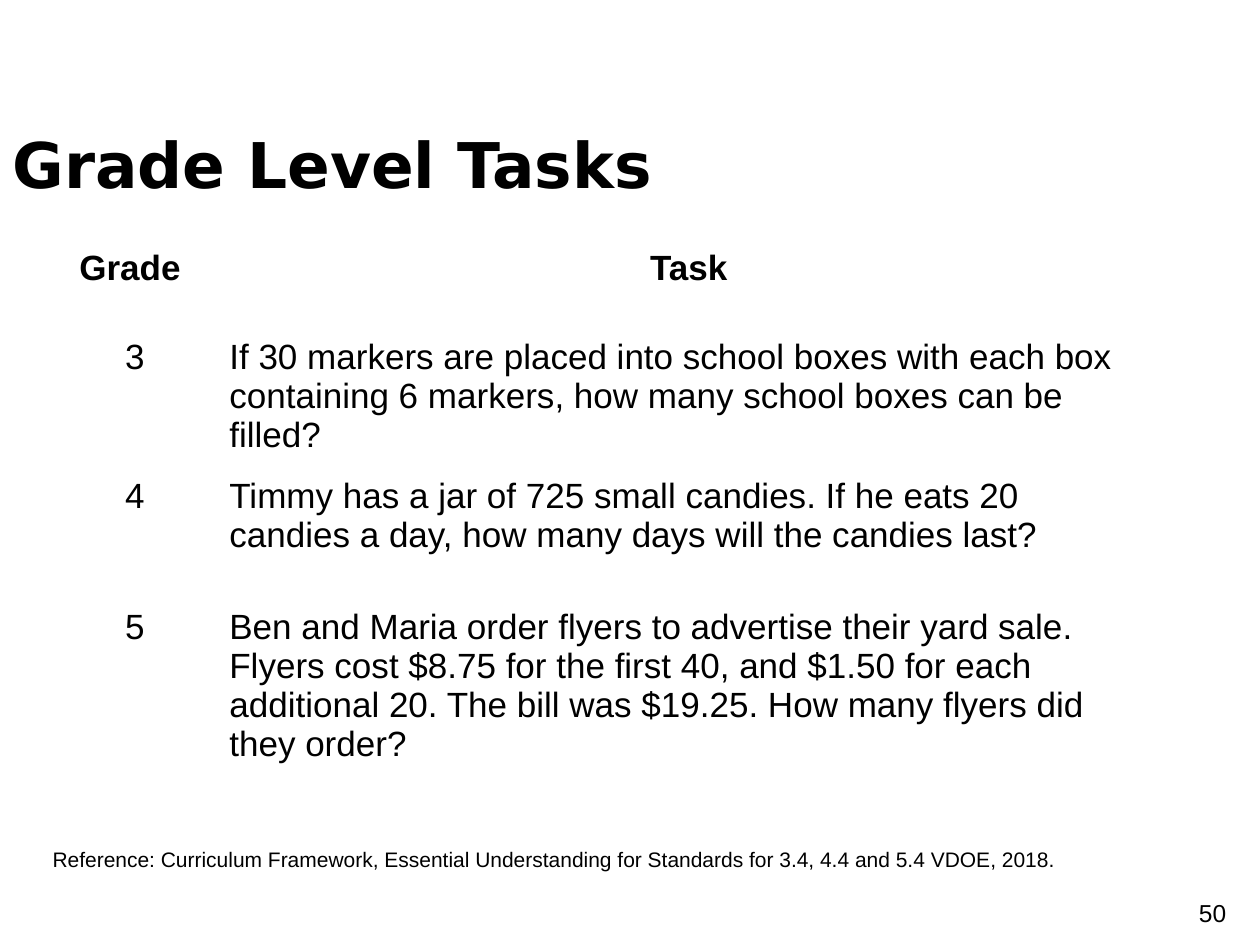
from pptx import Presentation
from pptx.dml.color import RGBColor
from pptx.enum.text import MSO_ANCHOR, PP_ALIGN
from pptx.util import Cm, Pt

COLORS = {"text": "000000", "background": "FFFFFF"}
BODY_FONT = "Arial"
TITLE_FONT = "DejaVu Sans"

COLUMN_WIDTHS = (3.3, 19.03)
ROW_HEIGHTS = (1.8, 2.59, 2.64, 1.8)
ROWS = [
    ("Grade ", "Task"),
    ("3", "If 30 markers are placed into school boxes with each box "
          "containing 6 markers, how many school boxes can be filled?"),
    ("4", "Timmy has a jar of 725 small candies. If he eats 20 candies a day, "
          "how many days will the candies last?"),
    ("5", "Ben and Maria order flyers to advertise their yard sale. "
          "Flyers cost $8.75 for the first 40, and $1.50 for each additional 20. "
          "The bill was $19.25. How many flyers did they order?"),
]


def write_text(text_frame, text, size, font=BODY_FONT, bold=False, align=PP_ALIGN.LEFT):
    paragraph = text_frame.paragraphs[0]
    paragraph.alignment = align
    run = paragraph.add_run()
    run.text = text
    run.font.name = font
    run.font.size = Pt(size)
    run.font.bold = bold
    run.font.color.rgb = RGBColor.from_string(COLORS["text"])


def add_text(slide, box, text, size, anchor=MSO_ANCHOR.TOP, **style):
    """Place one line of text in box, given as left, top, width, height in cm."""
    text_frame = slide.shapes.add_textbox(*map(Cm, box)).text_frame
    text_frame.word_wrap = True
    text_frame.vertical_anchor = anchor
    write_text(text_frame, text, size, **style)


def add_task_table(slide, box):
    table = slide.shapes.add_table(len(ROWS), len(COLUMN_WIDTHS), *map(Cm, box)).table
    table.horz_banding = False
    for column, width in zip(table.columns, COLUMN_WIDTHS):
        column.width = Cm(width)
    for row_index, (row, height) in enumerate(zip(table.rows, ROW_HEIGHTS)):
        row.height = Cm(height)
        is_header = row_index == 0
        for column_index, cell in enumerate(row.cells):
            cell.fill.background()
            centred = is_header or column_index == 0
            write_text(cell.text_frame, ROWS[row_index][column_index], 20, bold=is_header,
                       align=PP_ALIGN.CENTER if centred else PP_ALIGN.LEFT)


def build_slide(presentation):
    slide = presentation.slides.add_slide(presentation.slide_layouts[6])
    fill = slide.background.fill
    fill.solid()
    fill.fore_color.rgb = RGBColor.from_string(COLORS["background"])
    add_text(slide, (0, 1.7, 22.86, 3.18), "Grade Level Tasks", 36,
             anchor=MSO_ANCHOR.MIDDLE, font=TITLE_FONT, bold=True)
    add_text(slide, (19.05, 17.98, 5.92, 1.32), "50", 14, align=PP_ALIGN.RIGHT)
    add_task_table(slide, (1.07, 4.88, 22.33, 11.73))
    add_text(slide, (0.81, 16.94, 22.91, 0.76),
             "Reference: Curriculum Framework, Essential Understanding for Standards "
             "for 3.4, 4.4 and 5.4 VDOE, 2018.", 12)


def main():
    presentation = Presentation()
    presentation.slide_width = Cm(25.4)
    presentation.slide_height = Cm(19.05)
    build_slide(presentation)
    presentation.save("out.pptx")


if __name__ == "__main__":
    main()
